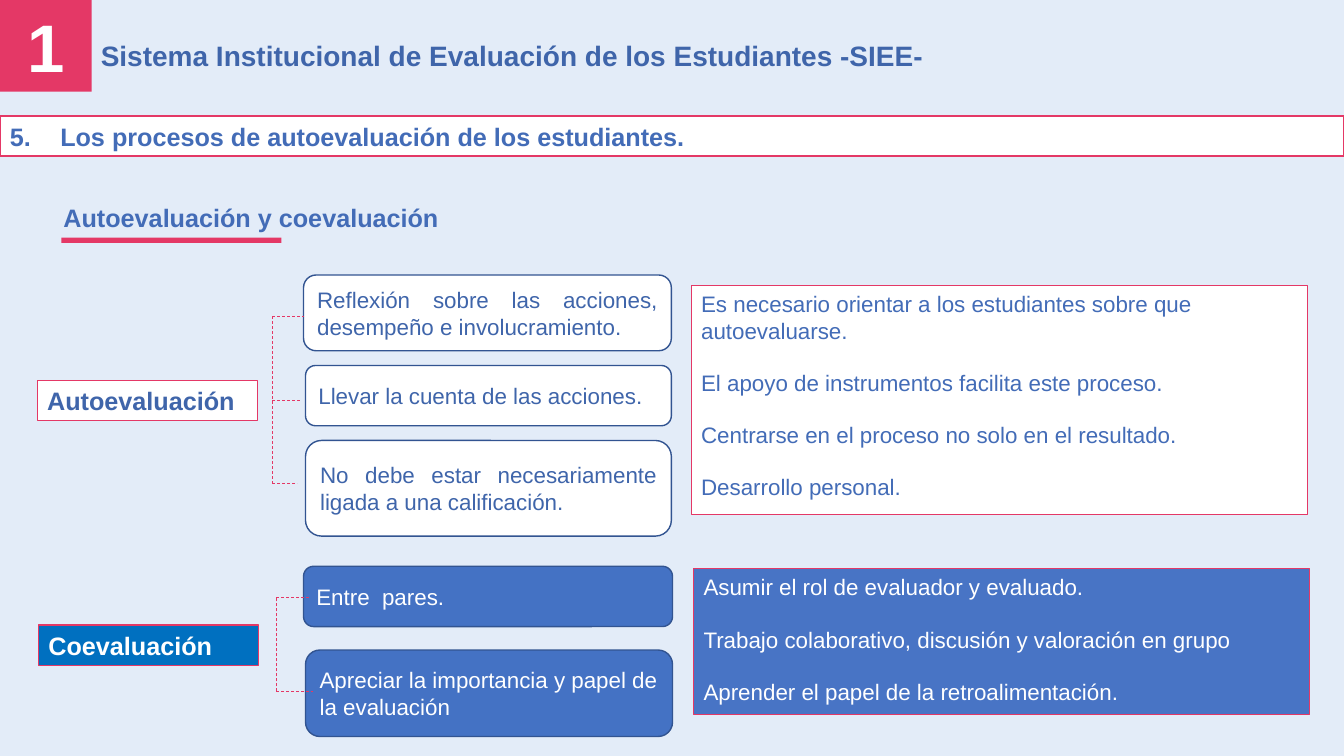
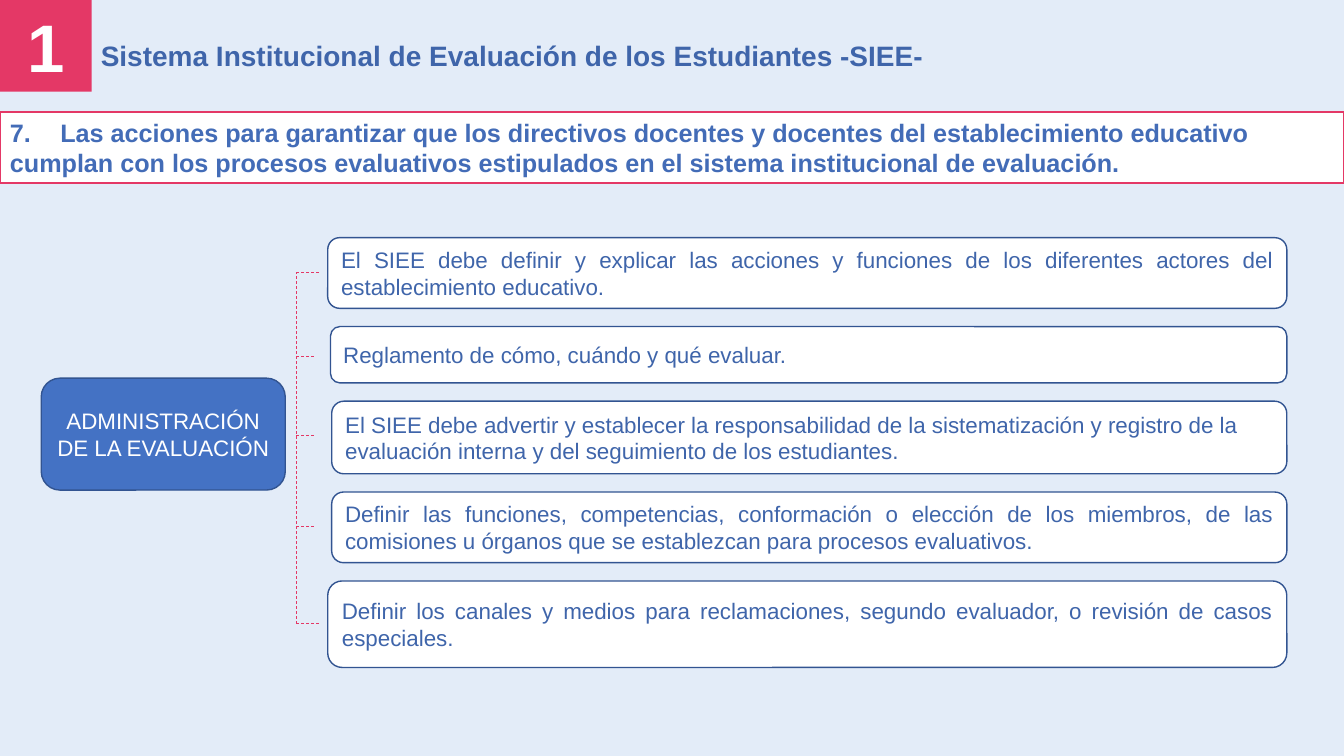
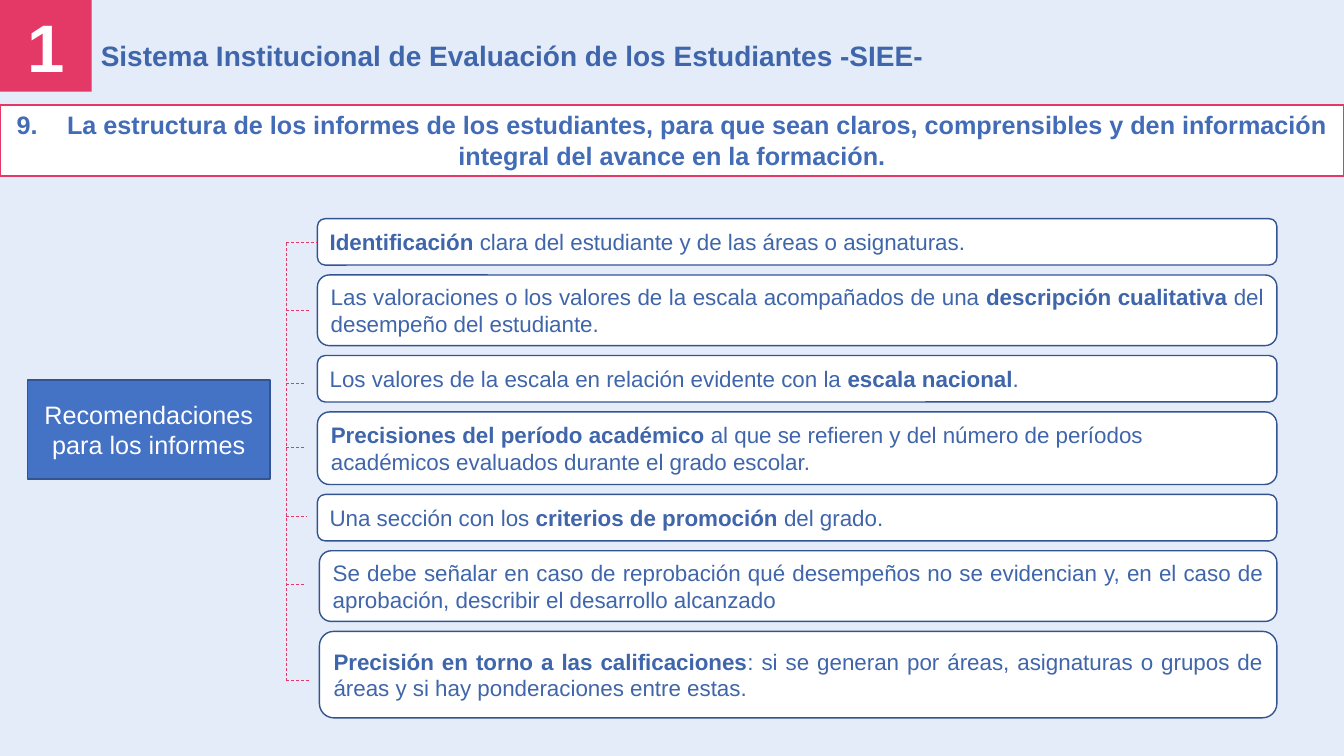
from dataclasses import dataclass

import lxml.etree
import pptx
import pptx.dml.color
import pptx.enum.dml
import pptx.enum.shapes
import pptx.enum.text
import pptx.oxml.ns
import pptx.util

Cm = pptx.util.Cm
Pt = pptx.util.Pt
RECT = pptx.enum.shapes.MSO_SHAPE.RECTANGLE
ROUND = pptx.enum.shapes.MSO_SHAPE.ROUNDED_RECTANGLE
TOP = pptx.enum.text.MSO_ANCHOR.TOP
MIDDLE = pptx.enum.text.MSO_ANCHOR.MIDDLE
LEFT = pptx.enum.text.PP_ALIGN.LEFT
CENTER = pptx.enum.text.PP_ALIGN.CENTER
JUSTIFY = pptx.enum.text.PP_ALIGN.JUSTIFY


@dataclass(frozen=True)
class Theme:
    font: str = "Arial"
    background: str = "E3ECF8"
    accent: str = "E43866"
    white: str = "FFFFFF"
    title: str = "3F65AA"
    heading: str = "436CB7"
    blue: str = "4472C4"
    panel_blue: str = "4874C5"
    bright_blue: str = "0070C0"
    outline: str = "325491"
    number_size: int = 48
    title_size: int = 20
    heading_size: int = 18
    body_size: int = 16


THEME = Theme()
WIDTH, HEIGHT = 33.87, 19.05
TITLE = "Sistema Institucional de Evaluación de los Estudiantes -SIEE-"
SPACED = (12, 6)
TIGHT = (0, 0)
SUBTITLE = "Autoevaluación y coevaluación"

SELF_LABEL = dict(text="Autoevaluación", frame=(0.94, 9.58, 5.54, 1.02), shape=RECT,
                  fill=THEME.white, line=THEME.accent, line_width=0.75,
                  color=THEME.title, size=THEME.heading_size, bold=True)
PEER_LABEL = dict(SELF_LABEL, text="Coevaluación", frame=(0.97, 15.75, 5.54, 1.02),
                  fill=THEME.bright_blue, color=THEME.white)
ADMIN_LABEL = dict(text="ADMINISTRACIÓN DE LA EVALUACIÓN", frame=(1.04, 9.53, 6.15, 2.82),
                   shape=ROUND, fill=THEME.blue, line=THEME.outline, line_width=1,
                   color=THEME.white, size=THEME.body_size, align=CENTER, anchor=MIDDLE)
REPORT_LABEL = dict(ADMIN_LABEL, text="Recomendaciones para los informes", shape=RECT,
                    frame=(0.69, 9.58, 6.12, 2.49), size=THEME.heading_size)

SELF_PANEL = dict(
    frame=(17.42, 7.19, 15.52, 5.77), fill=THEME.white, color=THEME.heading,
    text=["Es necesario orientar a los estudiantes sobre que autoevaluarse.",
          "El apoyo de instrumentos facilita este proceso.",
          "Centrarse en el proceso no solo en el resultado.",
          "Desarrollo personal."])
PEER_PANEL = dict(
    frame=(17.48, 14.33, 15.52, 3.68), fill=THEME.panel_blue, color=THEME.white,
    text=["Asumir el rol de evaluador y evaluado.",
          "Trabajo colaborativo, discusión y valoración en grupo",
          "Aprender el papel de la retroalimentación."])

# Cards: left, height, alignment, text (*bold*). Ticks: y, right end.
SELF_TREE = dict(
    label=SELF_LABEL, panel=SELF_PANEL, top=6.93, gap=0.37, right=16.92, spacing=SPACED,
    fill=THEME.white, color=THEME.title,
    cards=[
        (7.65, 1.91, JUSTIFY, "Reflexión sobre las acciones, desempeño e involucramiento."),
        (7.7, 1.52, JUSTIFY, "Llevar la cuenta de las acciones."),
        (7.7, 2.41, JUSTIFY, "No debe estar necesariamente ligada a una calificación."),
    ],
    rail=6.86, ticks=[(7.98, 7.65), (10.08, 7.59), (12.19, 7.49)])
PEER_TREE = dict(
    label=PEER_LABEL, panel=PEER_PANEL, top=14.27, gap=0.59, right=16.95, spacing=TIGHT,
    fill=THEME.blue, color=THEME.white,
    cards=[
        (7.65, 1.52, LEFT, "Entre  pares."),
        (7.7, 2.18, LEFT, "Apreciar la importancia y papel de la evaluación"),
    ],
    rail=6.96, ticks=[(15.06, 7.82), (17.42, 7.9)])
ADMIN_TREE = dict(
    label=ADMIN_LABEL, top=5.99, gap=0.46, right=32.43, spacing=TIGHT,
    fill=THEME.white, color=THEME.title,
    cards=[
        (8.26, 1.78, JUSTIFY, "El SIEE debe definir y explicar las acciones y funciones de los "
                              "diferentes actores del establecimiento educativo."),
        (8.33, 1.42, LEFT, "Reglamento de cómo, cuándo y qué evaluar."),
        (8.36, 1.83, LEFT, "El SIEE debe advertir y establecer la responsabilidad de la "
                           "sistematización y registro de la evaluación interna y del "
                           "seguimiento de los estudiantes."),
        (8.36, 1.78, JUSTIFY, "Definir las funciones, competencias, conformación o elección de "
                              "los miembros, de las comisiones u órganos que se establezcan "
                              "para procesos evaluativos."),
        (8.26, 2.18, JUSTIFY, "Definir los canales y medios para reclamaciones, segundo "
                              "evaluador, o revisión de casos especiales."),
    ],
    rail=7.47, ticks=[(6.86, 8.08), (8.99, 7.95), (10.97, 7.95), (13.26, 7.95), (15.72, 8.08)])
REPORT_TREE = dict(
    label=REPORT_LABEL, top=5.51, gap=0.25, right=32.18, spacing=TIGHT,
    fill=THEME.white, color=THEME.title,
    cards=[
        (8, 1.17, LEFT, "*Identificación *clara del estudiante y de las áreas o asignaturas."),
        (8, 1.78, JUSTIFY, "Las valoraciones o los valores de la escala acompañados de una "
                           "*descripción cualitativa *del desempeño del estudiante."),
        (8, 1.17, LEFT, "Los valores de la escala en relación evidente con la "
                        "*escala nacional*."),
        (8, 1.83, LEFT, "*Precisiones del período académico *al que se refieren y del número "
                        "de períodos académicos evaluados durante el grado escolar."),
        (8, 1.17, JUSTIFY, "Una sección con los *criterios de promoción* del grado."),
        (8.05, 1.78, JUSTIFY, "Se debe señalar en caso de reprobación qué desempeños no se "
                              "evidencian y, en el caso de aprobación, describir el desarrollo "
                              "alcanzado"),
        (8.05, 2.18, JUSTIFY, "*Precisión en torno a las calificaciones*: si se generan por "
                              "áreas, asignaturas o grupos de áreas y si hay ponderaciones "
                              "entre estas."),
    ],
    rail=7.21, ticks=[(6.1, 8), (7.82, 7.82), (9.65, 7.7), (11.28, 7.7), (13, 7.72),
                      (14.73, 7.7), (17.15, 7.82)])

SLIDES = [
    dict(heading="5.\tLos procesos de autoevaluación de los estudiantes.",
         band=(2.92, 1.02), align=LEFT, subtitle=SUBTITLE, trees=[SELF_TREE, PEER_TREE]),
    dict(heading="7.\tLas acciones para garantizar que los directivos docentes y docentes del "
                 "establecimiento educativo cumplan con los procesos evaluativos estipulados en "
                 "el sistema institucional de evaluación.",
         band=(2.82, 1.8), align=LEFT, trees=[ADMIN_TREE]),
    dict(heading="9.\tLa estructura de los informes de los estudiantes, para que sean claros, "
                 "comprensibles y den información integral del avance en la formación.",
         band=(2.64, 1.8), align=CENTER, trees=[REPORT_TREE]),
]


def rgb(code):
    return pptx.dml.color.RGBColor.from_string(code)


def add_tab_stop(paragraph, position):
    properties = paragraph._p.get_or_add_pPr()
    stops = lxml.etree.SubElement(properties, pptx.oxml.ns.qn("a:tabLst"))
    lxml.etree.SubElement(stops, pptx.oxml.ns.qn("a:tab"), pos=str(Cm(position)), algn="l")


def add_box(slide, frame, text=(), shape=None, fill=None, line=None, line_width=1,
            color=THEME.title, size=THEME.body_size, bold=False, align=LEFT, anchor=TOP,
            spacing=TIGHT):
    place = [Cm(length) for length in frame]
    if shape is None:
        box = slide.shapes.add_textbox(*place)
    else:
        box = slide.shapes.add_shape(shape, *place)
        box.shadow.inherit = False
        box.fill.solid()
        box.fill.fore_color.rgb = rgb(fill)
        if line:
            box.line.color.rgb = rgb(line)
            box.line.width = Pt(line_width)
        else:
            box.line.fill.background()
    body = box.text_frame
    body.word_wrap = True
    body.vertical_anchor = anchor
    for index, content in enumerate([text] if isinstance(text, str) else text):
        paragraph = body.add_paragraph() if index else body.paragraphs[0]
        paragraph.alignment = align
        paragraph.space_before, paragraph.space_after = map(Pt, spacing)
        if "\t" in content:
            add_tab_stop(paragraph, 1.27)
        for part, words in enumerate(content.split("*")):
            if words:
                run = paragraph.add_run()
                run.text = words
                run.font.name = THEME.font
                run.font.size = Pt(size)
                run.font.bold = bold or part % 2 == 1
                run.font.color.rgb = rgb(color)


def add_dash(slide, x1, y1, x2, y2):
    dash = slide.shapes.add_connector(pptx.enum.shapes.MSO_CONNECTOR.STRAIGHT,
                                      Cm(x1), Cm(y1), Cm(x2), Cm(y2))
    dash.line.color.rgb = rgb(THEME.accent)
    dash.line.width = Pt(0.5)
    dash.line.dash_style = pptx.enum.dml.MSO_LINE.DASH
    lxml.etree.SubElement(dash._element.spPr, pptx.oxml.ns.qn("a:effectLst"))


def add_tree(slide, tree):
    add_box(slide, **tree["label"])
    top = tree["top"]
    for left, height, align, text in tree["cards"]:
        add_box(slide, (left, top, tree["right"] - left, height), text, ROUND, tree["fill"],
                THEME.outline, color=tree["color"], align=align, anchor=MIDDLE,
                spacing=tree["spacing"])
        top += height + tree["gap"]
    rail, ticks = tree["rail"], tree["ticks"]
    add_dash(slide, rail, ticks[-1][0], rail, ticks[0][0])
    for y, end in ticks:
        add_dash(slide, rail, y, end, y)
    if "panel" in tree:
        add_box(slide, **tree["panel"], shape=RECT, line=THEME.accent, line_width=0.75,
                spacing=SPACED)


def add_header(slide, content):
    slide.background.fill.solid()
    slide.background.fill.fore_color.rgb = rgb(THEME.background)
    add_box(slide, (0, 0, 2.31, 2.31), "1", RECT, THEME.accent, color=THEME.white,
            size=THEME.number_size, bold=True, align=CENTER, anchor=MIDDLE)
    add_box(slide, (2.29, 0.84, 31.24, 1.12), TITLE, size=THEME.title_size, bold=True)
    top, height = content["band"]
    heading = dict(color=THEME.heading, size=THEME.heading_size, bold=True)
    add_box(slide, (0, top, WIDTH, height), content["heading"], RECT, THEME.white,
            THEME.accent, 1.5, align=content["align"], **heading)
    if "subtitle" in content:
        add_box(slide, (1.35, 4.98, 24.28, 0.89), content["subtitle"], **heading)
        add_box(slide, (1.55, 5.99, 5.54, 0.13), shape=RECT, fill=THEME.accent)


def main():
    deck = pptx.Presentation()
    deck.slide_width, deck.slide_height = Cm(WIDTH), Cm(HEIGHT)
    for content in SLIDES:
        slide = deck.slides.add_slide(deck.slide_layouts[6])
        add_header(slide, content)
        for tree in content["trees"]:
            add_tree(slide, tree)
    deck.save("out.pptx")


if __name__ == "__main__":
    main()
